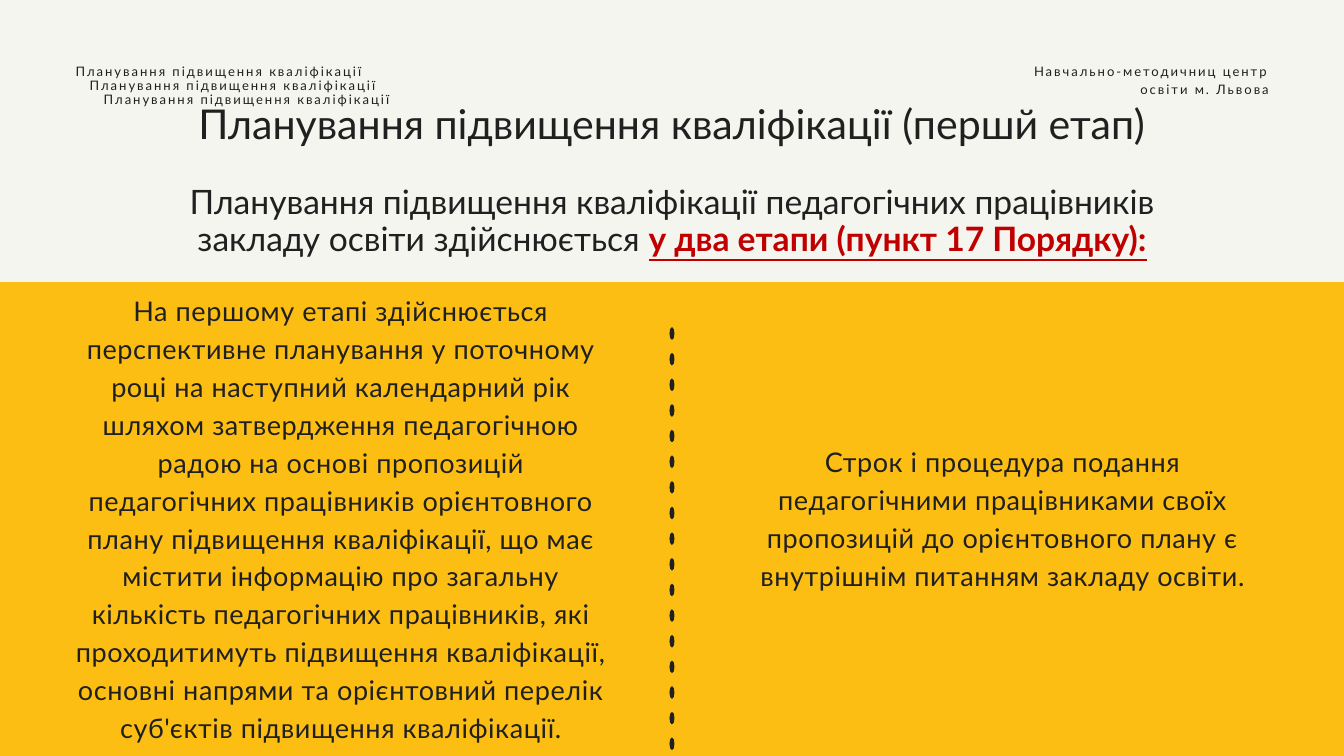
from dataclasses import dataclass
from math import cos, pi, sin

from pptx import Presentation
from pptx.dml.color import RGBColor
from pptx.enum.shapes import MSO_SHAPE
from pptx.enum.text import MSO_ANCHOR, MSO_AUTO_SIZE, PP_ALIGN
from pptx.util import Cm, Pt

RECT = MSO_SHAPE.RECTANGLE
TOP = MSO_ANCHOR.TOP
GROW = MSO_AUTO_SIZE.SHAPE_TO_FIT_TEXT
LEFT, MID, RIGHT = PP_ALIGN.LEFT, PP_ALIGN.CENTER, PP_ALIGN.RIGHT


@dataclass(frozen=True)
class Theme:
    """Colours, font and type sizes of the slide."""
    paper: RGBColor = RGBColor.from_string("F5F5EF")
    gold: RGBColor = RGBColor.from_string("FDBE14")
    ink: RGBColor = RGBColor.from_string("202020")
    red: RGBColor = RGBColor.from_string("C00000")
    font: str = "Lato"
    head: int = 44
    lead: int = 36
    body: int = 29
    note: int = 14


THEME = Theme()
TOPIC = "Планування підвищення кваліфікації"
CENTER = "Навчально-методичниц центр освіти м. Львова"
HEAD = "Планування підвищення кваліфікації (першй етап)"
LEAD = ("Планування підвищення кваліфікації педагогічних працівників "
        "закладу освіти здійснюється ")
STRESS = "у два етапи (пункт 17 Порядку):"
STAGE = ("На першому етапі здійснюється перспективне планування у поточному "
         "році на наступний календарний рік шляхом затвердження педагогічною "
         "радою на основі пропозицій педагогічних працівників орієнтовного "
         "плану підвищення кваліфікації, що має містити інформацію про "
         "загальну кількість педагогічних працівників, які проходитимуть "
         "підвищення кваліфікації, основні напрями та орієнтовний перелік "
         "суб'єктів підвищення кваліфікації.")
TERMS = ("Строк і процедура подання педагогічними працівниками своїх "
         "пропозицій до орієнтовного плану є внутрішнім питанням закладу "
         "освіти.")


def set_frame(frame):
    """Clear the margins and wrap the text from the top."""
    frame.margin_left = frame.margin_right = 0
    frame.margin_top = frame.margin_bottom = 0
    frame.word_wrap = True
    frame.auto_size = GROW
    frame.vertical_anchor = TOP


def set_para(para, align, lead):
    """Set the alignment and line pitch of a paragraph."""
    para.alignment = align
    para.line_spacing = Pt(lead)
    para.space_before = para.space_after = Pt(0)


def add_run(para, text, size, color=THEME.ink, gap=0):
    """Add one run with its font, colour and letter spacing."""
    run = para.add_run()
    run.text = text
    font = run.font
    font.name, font.size = THEME.font, Pt(size)
    font.color.rgb = color
    if gap:
        run._r.get_or_add_rPr().set("spc", str(gap))
    return run


def add_text(slide, box, text, size, align, lead, gap):
    """Add a text box with a single paragraph."""
    frame = slide.shapes.add_textbox(*box).text_frame
    set_frame(frame)
    para = frame.paragraphs[0]
    set_para(para, align, lead)
    add_run(para, text, size, gap=gap)


def add_note(slide, box, text, align=LEFT):
    """Add a small spaced note."""
    add_text(slide, box, text, THEME.note, align, 19.6, 210)


def add_body(slide, box, text):
    """Add a centred column of body text."""
    add_text(slide, box, text, THEME.body, MID, 40.6, 60)


def add_title(slide, box):
    """Place the title and the lead below it."""
    title = slide.shapes.title
    title.left, title.top, title.width, title.height = box
    frame = title.text_frame
    set_frame(frame)
    head = frame.paragraphs[0]
    set_para(head, MID, 52)
    add_run(head, HEAD, THEME.head)
    lead = frame.add_paragraph()
    set_para(lead, MID, 39.6)
    lead.space_before = Pt(39)
    add_run(lead, LEAD, THEME.lead)
    stress = add_run(lead, STRESS, THEME.lead, THEME.red)
    stress.font.bold = stress.font.underline = True


def paint(shape, color):
    """Fill a shape flat, with no line or shadow."""
    shape.shadow.inherit = False
    shape.fill.solid()
    shape.fill.fore_color.rgb = color
    shape.line.fill.background()


def add_dots(slide, box, count=17, sides=8):
    """Draw a column of oval dots as one outline."""
    left, top, width, height = box
    tall = Cm(0.48)
    pitch = (height - tall) / (count - 1)
    turns = [2 * pi * i / sides for i in range(sides)]
    pen = None
    for row in range(count):
        mid = top + tall / 2 + row * pitch
        points = [(left + width / 2 * (1 + cos(a)), mid + tall / 2 * sin(a))
                  for a in turns]
        if pen is None:
            pen = slide.shapes.build_freeform(*points[0])
        else:
            pen.move_to(*points[0])
        pen.add_line_segments(points[1:], close=True)
    paint(pen.convert_to_shape(), THEME.ink)


def add_header(slide, box):
    """Place the stepped topic notes and the centre's name."""
    left, top, width, _ = box
    step, wide = Cm(0.53), Cm(9.04)
    for i in range(3):
        spot = (left + i * step, top + i * step, Cm(11.71), Cm(0.66))
        add_note(slide, spot, TOPIC)
    spot = (left + width - wide, top, wide, Cm(1.35))
    add_note(slide, spot, CENTER, RIGHT)


def add_panel(slide, box):
    """Draw the gold panel with two columns and a dotted divide."""
    left, top, width, height = box
    paint(slide.shapes.add_shape(RECT, *box), THEME.gold)
    side, wide, thick = Cm(2.85), Cm(20.09), Cm(0.19)
    add_dots(slide, (left + (width - thick) // 2, top + Cm(1.7),
                     thick, Cm(15.99)))
    add_body(slide, (left + side, top + Cm(0.27), wide, Cm(17.04)), STAGE)
    add_body(slide, (left + width - side - wide, top + Cm(5.97),
                     wide, Cm(5.66)), TERMS)


def main():
    """Build the slide and save it."""
    deck = Presentation()
    deck.slide_width, deck.slide_height = Cm(50.8), Cm(28.58)
    slide = deck.slides.add_slide(deck.slide_layouts[5])
    back = slide.background.fill
    back.solid()
    back.fore_color.rgb = THEME.paper
    top = Cm(10.67)
    add_panel(slide, (0, top, deck.slide_width, deck.slide_height - top))
    add_title(slide, (Cm(6.09), Cm(3.76), Cm(38.63), Cm(6.12)))
    add_header(slide, (Cm(2.86), Cm(2.29), Cm(45.1), Cm(1.72)))
    deck.save("out.pptx")


if __name__ == "__main__":
    main()
